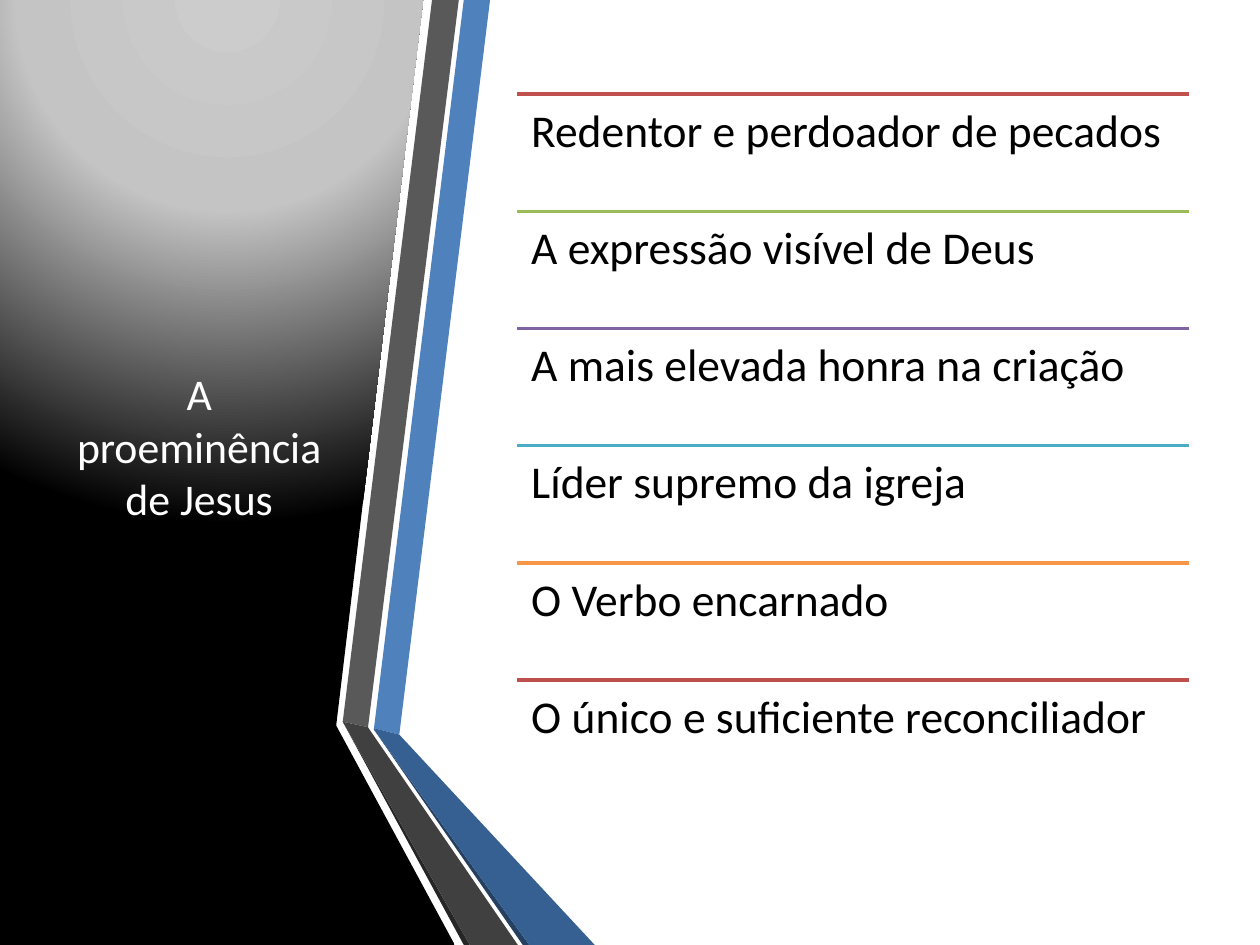
from lxml.etree import SubElement
from pptx import Presentation
from pptx.dml.color import RGBColor
from pptx.enum.shapes import MSO_CONNECTOR
from pptx.enum.text import MSO_ANCHOR, PP_ALIGN
from pptx.oxml.ns import qn
from pptx.util import Cm, Pt

COLORS = {
    "white": "FFFFFF", "black": "000000", "silver": "CCCCCC", "light": "C4C4C4",
    "blue": "4F81BD", "deep_blue": "376092", "navy": "254061",
    "gray": "595959", "dark_gray": "404040", "charcoal": "262626",
    "red": "C0504D", "green": "9BBB59", "purple": "8064A2",
    "teal": "4BACC6", "orange": "F79646",
}
WIDTH, HEIGHT = 25.4, 19.05
PANEL = [(6.71, 0), (8.53, 0), (6.78, 14.61), (6.78, 14.63), (9.17, HEIGHT),
         (0, HEIGHT), (0, 0)]
GLOW = [(0, "silver"), (40, "light"), (100, "black")]
GLOW_CENTER = {"l": 50, "t": -80, "r": 50, "b": 180}
RIBBONS = [
    ("blue", [(7.54, 14.68), (8.05, 14.81), (9.88, 0), (9.35, 0)]),
    ("gray", [(9.25, 0), (8.71, 0), (6.91, 14.55), (7.42, 14.66)]),
    ("charcoal", [(6.91, 14.55), (9.35, HEIGHT), (9.47, HEIGHT)]),
    ("navy", [(7.54, 14.71), (10.54, HEIGHT), (10.67, HEIGHT)]),
    ("deep_blue", [(7.54, 14.71), (10.67, HEIGHT), (11.99, HEIGHT),
                   (8.05, 14.81), (7.54, 14.68)]),
    ("dark_gray", [(10.44, HEIGHT), (7.52, 14.81), (7.42, 14.66),
                   (6.91, 14.55), (9.47, HEIGHT)]),
]
TITLE = "A proeminência de Jesus"
ROWS = [
    ("Redentor e perdoador de pecados", "red"),
    ("A expressão visível de Deus", "green"),
    ("A mais elevada honra na criação", "purple"),
    ("Líder supremo da igreja", "teal"),
    ("O Verbo encarnado", "orange"),
    ("O único e suficiente reconciliador", "red"),
]
TOP, BODY_HEIGHT = 1.9, 14.17
LIST_LEFT, LIST_WIDTH = 10.43, 13.53
ROW_INSETS = {f"margin_{side}": Cm(0.28) for side in ("left", "top", "right", "bottom")}


def color(name):
    return RGBColor.from_string(COLORS[name])


def apply_format(target, values):
    for name, value in values.items():
        setattr(target, name, value)


def add_outline(shapes, points):
    start, *rest = [(Cm(x), Cm(y)) for x, y in points]
    builder = shapes.build_freeform(*start)
    builder.add_line_segments(rest, close=True)
    shape = builder.convert_to_shape()
    shape.shadow.inherit = False
    shape.line.fill.background()
    return shape


def add_ribbon(shapes, fill, points):
    shape = add_outline(shapes, points)
    shape.fill.solid()
    shape.fill.fore_color.rgb = color(fill)


def add_panel(shapes):
    shape = add_outline(shapes, PANEL)
    shape.fill.gradient()
    gradient = shape.element.spPr.find(qn("a:gradFill"))
    for child in list(gradient):
        gradient.remove(child)
    stops = SubElement(gradient, qn("a:gsLst"))
    for position, name in GLOW:
        stop = SubElement(stops, qn("a:gs"), pos=str(position * 1000))
        SubElement(stop, qn("a:srgbClr"), val=COLORS[name])
    circle = SubElement(gradient, qn("a:path"))
    circle.set("path", "circle")
    center = {side: str(percent * 1000) for side, percent in GLOW_CENTER.items()}
    SubElement(circle, qn("a:fillToRect"), center)


def add_text(shapes, text, place, frame_format, para_format, size, fill):
    box = shapes.add_textbox(*[Cm(length) for length in place])
    apply_format(box.text_frame, {"word_wrap": True, **frame_format})
    para = box.text_frame.paragraphs[0]
    apply_format(para, para_format)
    span = para.add_run()
    span.text = text
    apply_format(span.font, {"name": "Calibri", "size": Pt(size)})
    span.font.color.rgb = color(fill)


def add_rule(shapes, top, fill):
    rule = shapes.add_connector(MSO_CONNECTOR.STRAIGHT, Cm(LIST_LEFT), Cm(top),
                                Cm(LIST_LEFT + LIST_WIDTH), Cm(top))
    rule.line.color.rgb = color(fill)
    rule.line.width = Pt(2)
    SubElement(rule.element.spPr, qn("a:effectLst"))


def add_list(shapes):
    row_height = BODY_HEIGHT / len(ROWS)
    for index, (text, fill) in enumerate(ROWS):
        top = TOP + index * row_height
        add_rule(shapes, top, fill)
        add_text(shapes, text, (LIST_LEFT, top, LIST_WIDTH, row_height),
                 {"vertical_anchor": MSO_ANCHOR.TOP, **ROW_INSETS},
                 {"alignment": PP_ALIGN.LEFT, "line_spacing": 0.9, "space_after": Pt(9)},
                 26, "black")


def main():
    deck = Presentation()
    apply_format(deck, {"slide_width": Cm(WIDTH), "slide_height": Cm(HEIGHT)})
    page = deck.slides.add_slide(deck.slide_layouts[6])
    page.background.fill.solid()
    page.background.fill.fore_color.rgb = color("white")
    add_panel(page.shapes)
    ribbons = page.shapes.add_group_shape()
    for fill, points in RIBBONS:
        add_ribbon(ribbons.shapes, fill, points)
    add_text(page.shapes, TITLE, (1.12, TOP, 5.79, BODY_HEIGHT),
             {"vertical_anchor": MSO_ANCHOR.MIDDLE}, {"alignment": PP_ALIGN.CENTER},
             25, "white")
    add_list(page.shapes.add_group_shape().shapes)
    deck.save("out.pptx")


if __name__ == "__main__":
    main()
